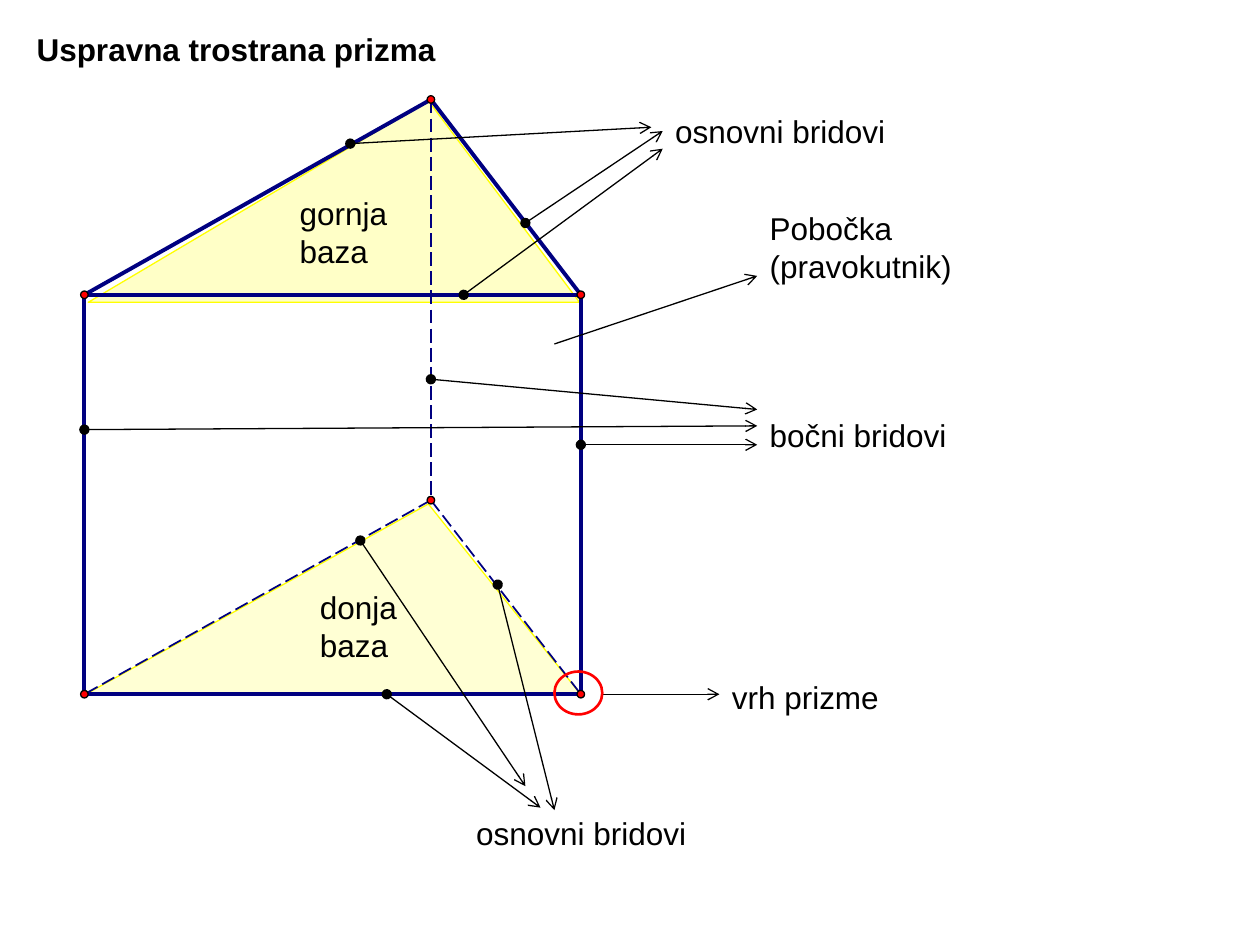
from dataclasses import dataclass
from typing import Optional

from lxml import etree
from pptx import Presentation
from pptx.dml.color import RGBColor
from pptx.enum.dml import MSO_LINE
from pptx.enum.shapes import MSO_CONNECTOR, MSO_SHAPE
from pptx.enum.text import MSO_ANCHOR, MSO_AUTO_SIZE, PP_ALIGN
from pptx.oxml.ns import qn
from pptx.util import Inches, Pt

LONG_DASH = MSO_LINE.LONG_DASH
STRAIGHT = MSO_CONNECTOR.STRAIGHT
OVAL = MSO_SHAPE.OVAL
TOP = MSO_ANCHOR.TOP
LEFT = PP_ALIGN.LEFT
NO_AUTO_SIZE = MSO_AUTO_SIZE.NONE
LEFT_SIDE = 1

# The slide is a grid of 100 columns by 75 rows
CELL = Inches(0.1)
COLUMNS, ROWS = 100, 75
VERTEX_SIZE = 0.6
FONT = "Arial"
BLACK, NAVY, RED, YELLOW = "000000", "000080", "FF0000", "FFFF00"

Point = tuple[float, float]


@dataclass
class Label:
    text: str
    column: float
    row: float
    width: float
    height: float


@dataclass
class Edge:
    start: str
    end: str
    hidden: bool = False


@dataclass
class Arrow:
    start: Point
    end: Point
    dotted: bool = True
    target: Optional[str] = None


VERTICES = {
    "top left": (6.7, 23.4), "top right": (46.1, 23.4), "top back": (34.2, 7.9),
    "bottom left": (6.7, 55.1), "bottom right": (46.1, 55.1), "bottom back": (34.2, 39.7),
}
EDGES = [
    Edge("bottom left", "bottom right"),
    Edge("bottom back", "bottom right", hidden=True),
    Edge("bottom back", "bottom left", hidden=True),
    Edge("top right", "bottom right"),
    Edge("top left", "top right"),
    Edge("top back", "top right"),
    Edge("top back", "top left"),
    Edge("top back", "bottom back", hidden=True),
    Edge("top left", "bottom left"),
]
# Outline of each base and its opacity in percent
BASES = [
    ([(7, 23.5), (45.8, 23.5), (34.1, 8.4)], 22),
    ([(7.1, 55.1), (45.9, 55.1), (34.1, 40.1)], 17),
]
TITLE = Label("Uspravna trostrana prizma", 1.9, 1.9, 55.2, 4)
LABELS = {
    "lower base": Label("donja baza", 24.4, 46.2, 14.1, 7),
    "upper base": Label("gornja baza", 22.8, 14.9, 14.1, 7),
    "lower base edges": Label("osnovni bridovi", 36.8, 64.1, 23.2, 4),
    "upper base edges": Label("osnovni bridovi", 52.6, 8.4, 23.2, 4),
    "side edges": Label("bočni bridovi", 60.1, 32.5, 26, 4),
    "side face": Label("Pobočka (pravokutnik)", 60.1, 16.1, 20.7, 7),
    "vertex": Label("vrh prizme", 57.1, 53.3, 22.8, 3.6),
}
ARROWS = [
    # Edges of the lower base
    Arrow((30.7, 55.1), (42.9, 64.1)),
    Arrow((39.5, 46.4), (44, 64.3)),
    Arrow((28.6, 42.9), (41.7, 62.4)),
    # Side edges
    Arrow((46.1, 35.3), (60.1, 35.3)),
    Arrow((6.7, 34.1), (60.1, 33.8)),
    Arrow((34.2, 30.1), (60.1, 32.5)),
    # Side face and vertex
    Arrow((44, 27.3), (60.1, 21.9), dotted=False),
    Arrow((47.8, 55.1), (57.1, 55.1), dotted=False, target="vertex"),
    # Edges of the upper base
    Arrow((36.8, 23.4), (52.6, 11.8)),
    Arrow((41.7, 17.7), (52.6, 10.4), target="upper base edges"),
    Arrow((27.8, 11.4), (51.7, 10.1)),
]


def grid(cells: float) -> int:
    return round(cells * CELL)


def color(value: str) -> RGBColor:
    return RGBColor.from_string(value)


def set_line(line, value: str, points: float) -> None:
    line.color.rgb = color(value)
    line.width = Pt(points)


def add_base(slide, outline: list[Point], opacity: int) -> None:
    builder = slide.shapes.build_freeform(*outline[0], scale=CELL)
    builder.add_line_segments(outline[1:], close=True)
    shape = builder.convert_to_shape()
    shape.shadow.inherit = False
    shape.fill.solid()
    shape.fill.fore_color.rgb = color(YELLOW)
    fill_color = shape.element.spPr.find(qn("a:solidFill"))[0]
    etree.SubElement(fill_color, qn("a:alpha"), val=str(opacity * 1000))
    set_line(shape.line, YELLOW, 0)


def add_line(shapes, start: Point, end: Point, value: str, points: float):
    line = shapes.add_connector(STRAIGHT, *map(grid, start + end))
    set_line(line.line, value, points)
    etree.SubElement(line.element.spPr, qn("a:effectLst"))
    return line


def add_ellipse(shapes, column: float, row: float, width: float, height: float,
                line_color: str, points: float, fill: Optional[str] = None) -> None:
    shape = shapes.add_shape(OVAL, *map(grid, (column, row, width, height)))
    shape.shadow.inherit = False
    if fill:
        shape.fill.solid()
        shape.fill.fore_color.rgb = color(fill)
    else:
        shape.fill.background()
    set_line(shape.line, line_color, points)


def add_prism(slide) -> None:
    shapes = slide.shapes.add_group_shape().shapes
    for edge in EDGES:
        line = add_line(shapes, VERTICES[edge.start], VERTICES[edge.end],
                        NAVY, 1 if edge.hidden else 2.25)
        if edge.hidden:
            line.line.dash_style = LONG_DASH
    for column, row in VERTICES.values():
        add_ellipse(shapes, column - VERTEX_SIZE / 2, row - VERTEX_SIZE / 2,
                    VERTEX_SIZE, VERTEX_SIZE, BLACK, 0, RED)


def write_label(shape, label: Label, bold: bool = False) -> None:
    shape.left, shape.top = grid(label.column), grid(label.row)
    shape.width, shape.height = grid(label.width), grid(label.height)
    frame = shape.text_frame
    frame.text = label.text
    frame.word_wrap = True
    frame.auto_size = NO_AUTO_SIZE
    frame.vertical_anchor = TOP
    paragraph = frame.paragraphs[0]
    paragraph.alignment = LEFT
    font = paragraph.runs[0].font
    font.name, font.size, font.bold = FONT, Pt(18), bold
    font.color.rgb = color(BLACK)


def add_arrow(slide, arrow: Arrow, labels: dict) -> None:
    line = add_line(slide.shapes, arrow.start, arrow.end, BLACK, 0.75)
    outline = line.line._get_or_add_ln()
    if arrow.dotted:
        etree.SubElement(outline, qn("a:headEnd"), type="oval")
    etree.SubElement(outline, qn("a:tailEnd"), type="arrow")
    if arrow.target:
        line.end_connect(labels[arrow.target], LEFT_SIDE)


def main() -> None:
    presentation = Presentation()
    presentation.slide_width, presentation.slide_height = grid(COLUMNS), grid(ROWS)
    slide = presentation.slides.add_slide(presentation.slide_layouts[5])
    write_label(slide.shapes.title, TITLE, bold=True)

    # Prism with its shaded bases
    for outline, opacity in BASES:
        add_base(slide, outline, opacity)
    add_prism(slide)

    # Labels, arrows and the circled vertex
    labels = {}
    for name, label in LABELS.items():
        labels[name] = slide.shapes.add_textbox(0, 0, CELL, CELL)
        write_label(labels[name], label)
    for arrow in ARROWS:
        add_arrow(slide, arrow, labels)
    add_ellipse(slide.shapes, 44, 53.3, 3.8, 3.4, RED, 1.5)

    presentation.save("out.pptx")


if __name__ == "__main__":
    main()
